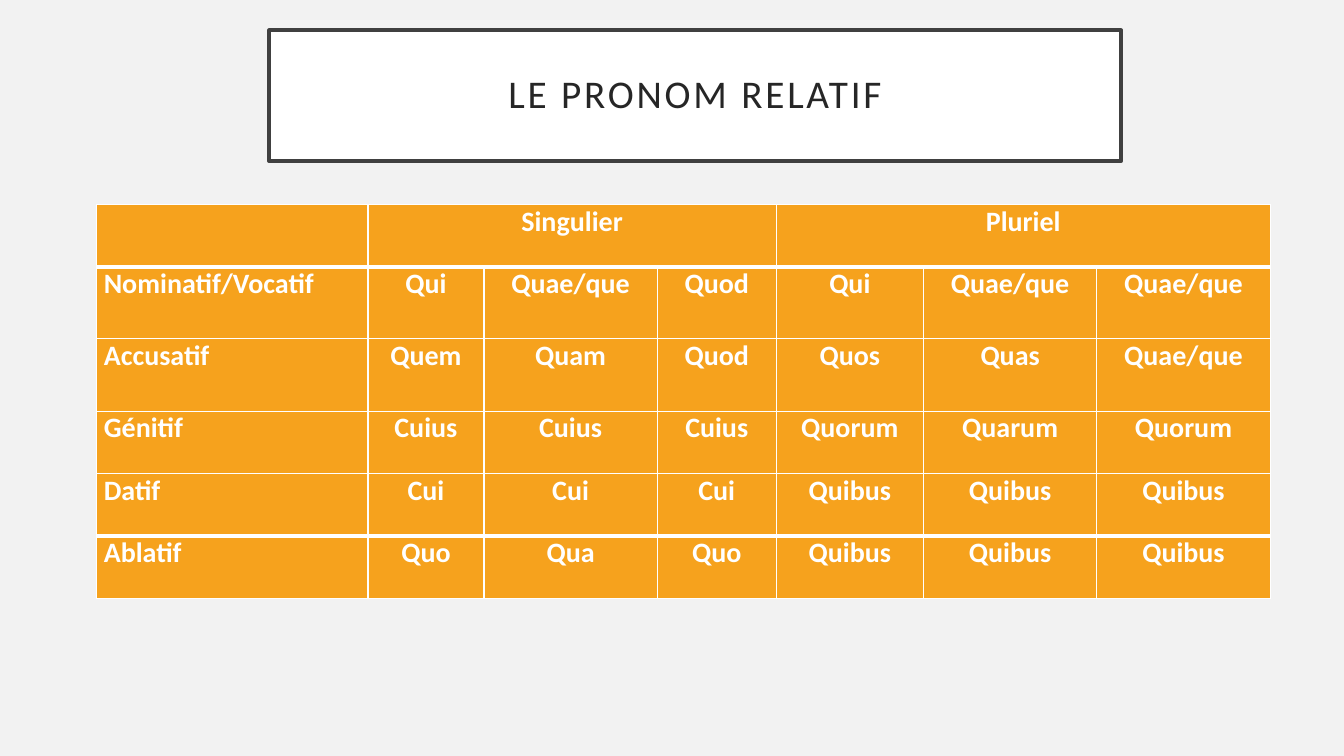
from dataclasses import dataclass

from pptx import Presentation
from pptx.dml.color import RGBColor as Color
from pptx.enum.text import MSO_ANCHOR as Anchor, PP_ALIGN as Align
from pptx.oxml.ns import qn
from pptx.util import Emu, Pt
from lxml.etree import SubElement

EMU_PER_PX = 9144  # 100 px to the inch


@dataclass(frozen=True)
class Theme:
    font: str = "Calibri"
    background: str = "F2F2F2"
    white: str = "FFFFFF"
    frame: str = "404040"
    title_text: str = "262626"
    cell: str = "F6A21D"
    title_size: int = 28
    cell_size: int = 20
    frame_width: float = 2.5
    thin: int = 1
    thick: int = 3


THEME = Theme()

TITLE = "LE PRONOM RELATIF"
COLUMN_WIDTHS = [269, 115, 172, 118, 146, 172, 172]
ROW_HEIGHTS = [62, 71, 72, 62, 62, 62]
NUMBERS = {1: "Singulier", 4: "Pluriel"}  # first column of each group
GENDERS = 3
DECLENSION = [
    ["Nominatif/Vocatif", "Qui", "Quae/que", "Quod", "Qui", "Quae/que", "Quae/que"],
    ["Accusatif", "Quem", "Quam", "Quod", "Quos", "Quas", "Quae/que"],
    ["Génitif", "Cuius", "Cuius", "Cuius", "Quorum", "Quarum", "Quorum"],
    ["Datif", "Cui", "Cui", "Cui", "Quibus", "Quibus", "Quibus"],
    ["Ablatif", "Quo", "Qua", "Quo", "Quibus", "Quibus", "Quibus"],
]


def px(length):
    return Emu(length * EMU_PER_PX)


def rgb(value):
    return Color.from_string(value)


def add_run(paragraph, text, size, color, bold=False):
    run = paragraph.add_run()
    run.text = text
    run.font.name = THEME.font
    run.font.size = Pt(size)
    run.font.bold = bold
    run.font.color.rgb = rgb(color)
    return run


def set_margins(target, horizontal, vertical):
    target.margin_left = target.margin_right = px(horizontal)
    target.margin_top = target.margin_bottom = px(vertical)


def format_title(shape, left, top, width, height):
    shape.left, shape.top = px(left), px(top)
    shape.width, shape.height = px(width), px(height)
    shape.fill.solid()
    shape.fill.fore_color.rgb = rgb(THEME.white)
    shape.line.color.rgb = rgb(THEME.frame)
    shape.line.width = Pt(THEME.frame_width)
    frame = shape.text_frame
    frame.word_wrap = True
    frame.vertical_anchor = Anchor.MIDDLE
    set_margins(frame, 20, 20)
    paragraph = frame.paragraphs[0]
    paragraph.alignment = Align.CENTER
    paragraph.line_spacing = 0.9
    run = add_run(paragraph, TITLE, THEME.title_size, THEME.title_text)
    run.font._element.set("spc", "200")  # letter spacing, 2 pt


def set_borders(cell, top, bottom):
    properties = cell._tc.get_or_add_tcPr()
    widths = {"L": THEME.thin, "R": THEME.thin, "T": top, "B": bottom}
    for side, width in widths.items():
        line = SubElement(properties, qn(f"a:ln{side}"), w=str(Pt(width)))
        fill = SubElement(line, qn("a:solidFill"))
        SubElement(fill, qn("a:srgbClr"), val=THEME.white)


def format_cell(cell, text, alignment, top, bottom):
    set_borders(cell, top, bottom)
    cell.fill.solid()
    cell.fill.fore_color.rgb = rgb(THEME.cell)
    cell.vertical_anchor = Anchor.TOP
    set_margins(cell, 7, 0)
    if text:
        paragraph = cell.text_frame.paragraphs[0]
        paragraph.alignment = alignment
        add_run(paragraph, text, THEME.cell_size, THEME.white, bold=True)


def add_declension_table(slide, left, top):
    header = [NUMBERS.get(column, "") for column in range(len(COLUMN_WIDTHS))]
    rows = [header] + DECLENSION
    table = slide.shapes.add_table(
        len(rows), len(COLUMN_WIDTHS), px(left), px(top),
        px(sum(COLUMN_WIDTHS)), px(sum(ROW_HEIGHTS)),
    ).table
    for column, width in zip(table.columns, COLUMN_WIDTHS):
        column.width = px(width)
    for row, height in zip(table.rows, ROW_HEIGHTS):
        row.height = px(height)

    # Thick rules lie under the header and above the last row
    thick_rules = {1, len(rows) - 1}
    rules = [THEME.thick if index in thick_rules else THEME.thin
             for index in range(len(rows) + 1)]
    for r, texts in enumerate(rows):
        for c, text in enumerate(texts):
            alignment = Align.CENTER if c else Align.LEFT
            format_cell(table.cell(r, c), text, alignment, rules[r], rules[r + 1])

    # Each number spans its three genders
    for first in NUMBERS:
        table.cell(0, first).merge(table.cell(0, first + GENDERS - 1))


def main():
    presentation = Presentation()
    presentation.slide_width, presentation.slide_height = px(1333), px(750)
    slide = presentation.slides.add_slide(presentation.slide_layouts[5])

    # Background
    slide.background.fill.solid()
    slide.background.fill.fore_color.rgb = rgb(THEME.background)

    # Framed title and table
    format_title(slide.shapes.title, 267, 30, 845, 130)
    add_declension_table(slide, 96, 203)
    presentation.save("out.pptx")


if __name__ == "__main__":
    main()
